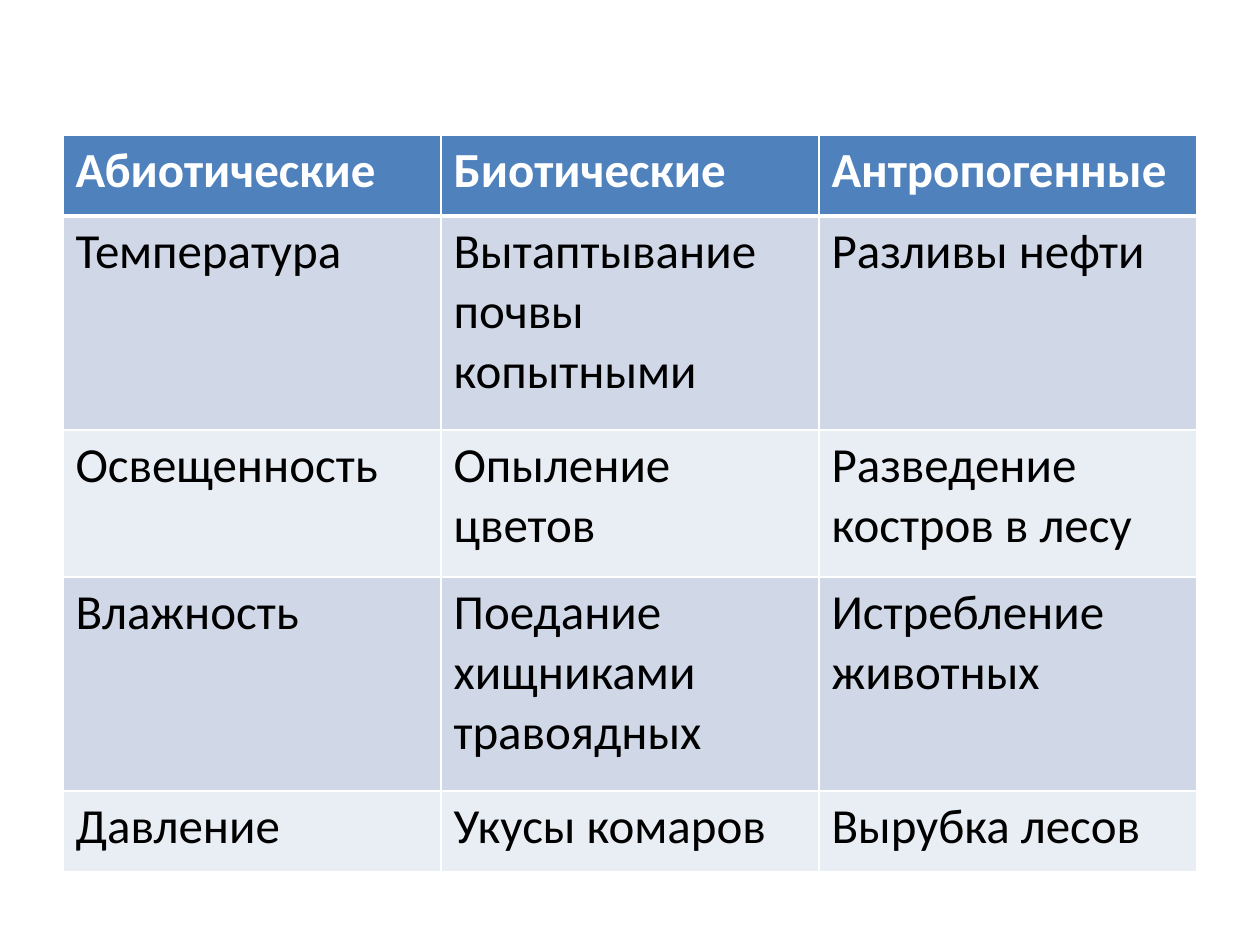
from lxml.etree import SubElement
from pptx import Presentation
from pptx.dml.color import RGBColor
from pptx.oxml.ns import qn
from pptx.util import Pt

FACTORS = [
    ("Абиотические", "Биотические", "Антропогенные"),
    ("Температура", "Вытаптывание почвы копытными", "Разливы нефти"),
    ("Освещенность", "Опыление цветов", "Разведение костров в лесу"),
    ("Влажность", "Поедание хищниками травоядных", "Истребление животных"),
    ("Давление", "Укусы комаров", "Вырубка лесов"),
]
ROW_HEIGHTS = [81, 214, 147, 214, 81]
COLUMN_WIDTH = 378
LEFT, TOP = 63, 135
HEADER_FILL, BAND_FILLS = "4F81BD", ("D0D8E8", "E9EDF4")
WHITE, BLACK = "FFFFFF", "000000"
THIN, THICK = 1, 3


def px(length):
    return round(length * 914400 / 126)


def color(value):
    return RGBColor.from_string(value)


def add_borders(cell, widths):
    properties = cell._tc.get_or_add_tcPr()
    for side, width in widths.items():
        border = SubElement(properties, qn(f"a:ln{side}"), w=str(Pt(width)))
        paint = SubElement(border, qn("a:solidFill"))
        SubElement(paint, qn("a:srgbClr"), val=WHITE)


def format_cell(cell, wording, row):
    header = row == 0
    add_borders(cell, {
        "L": THIN,
        "R": THIN,
        "T": THICK if row == 1 else THIN,
        "B": THICK if header else THIN,
    })
    cell.fill.solid()
    cell.fill.fore_color.rgb = color(HEADER_FILL if header else BAND_FILLS[(row - 1) % 2])
    cell.text = wording
    font = cell.text_frame.paragraphs[0].runs[0].font
    for name, value in {"name": "Calibri", "size": Pt(28), "bold": header}.items():
        setattr(font, name, value)
    font.color.rgb = color(WHITE if header else BLACK)


def main():
    deck = Presentation()
    deck.slide_width, deck.slide_height = px(1260), px(945)
    slide = deck.slides.add_slide(deck.slide_layouts[6])
    columns = len(FACTORS[0])
    table = slide.shapes.add_table(
        len(FACTORS), columns, px(LEFT), px(TOP),
        px(COLUMN_WIDTH * columns), px(sum(ROW_HEIGHTS)),
    ).table
    for column in table.columns:
        column.width = px(COLUMN_WIDTH)
    for row, (height, wordings) in enumerate(zip(ROW_HEIGHTS, FACTORS)):
        table.rows[row].height = px(height)
        for column, wording in enumerate(wordings):
            format_cell(table.cell(row, column), wording, row)
    deck.save("out.pptx")


if __name__ == "__main__":
    main()
